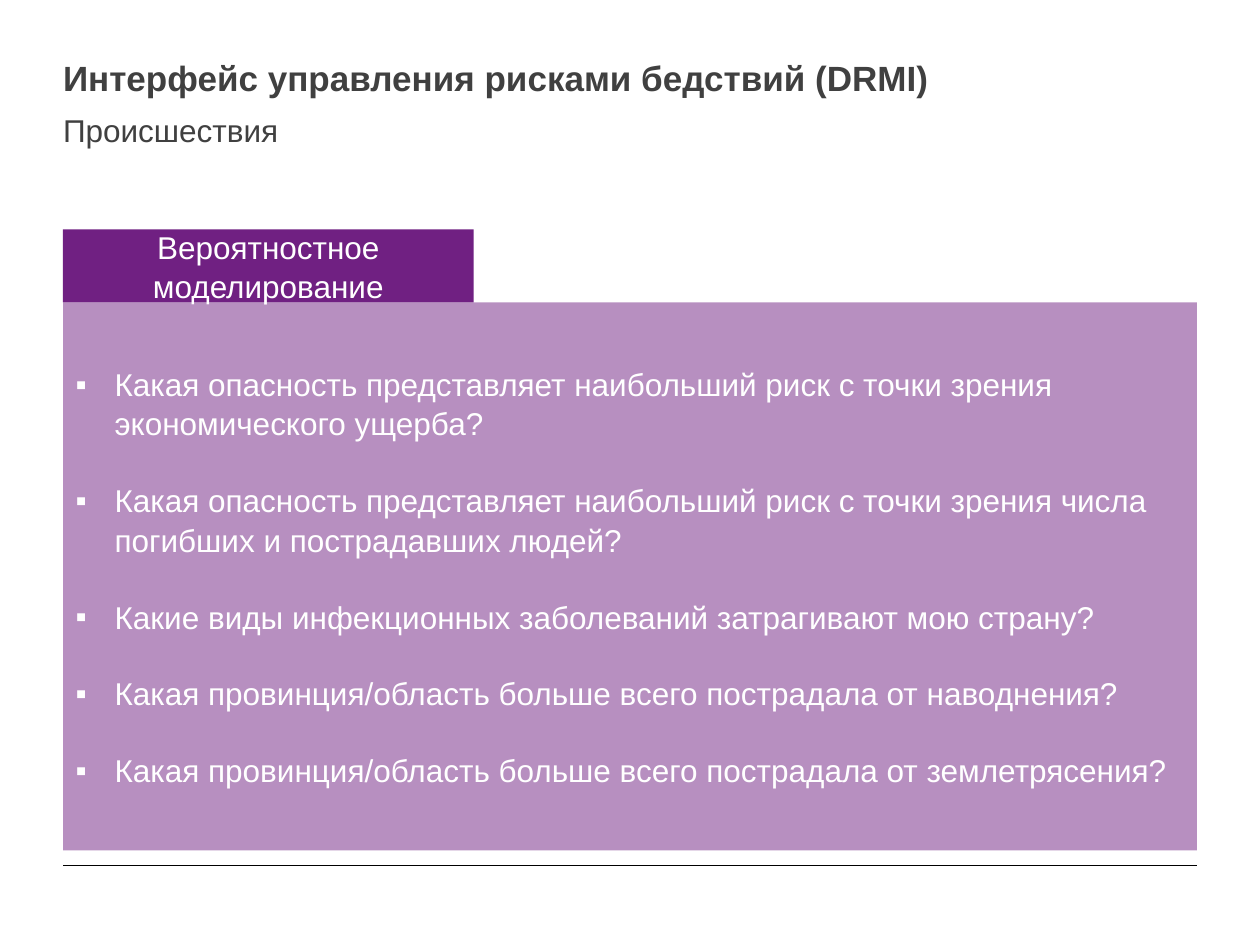
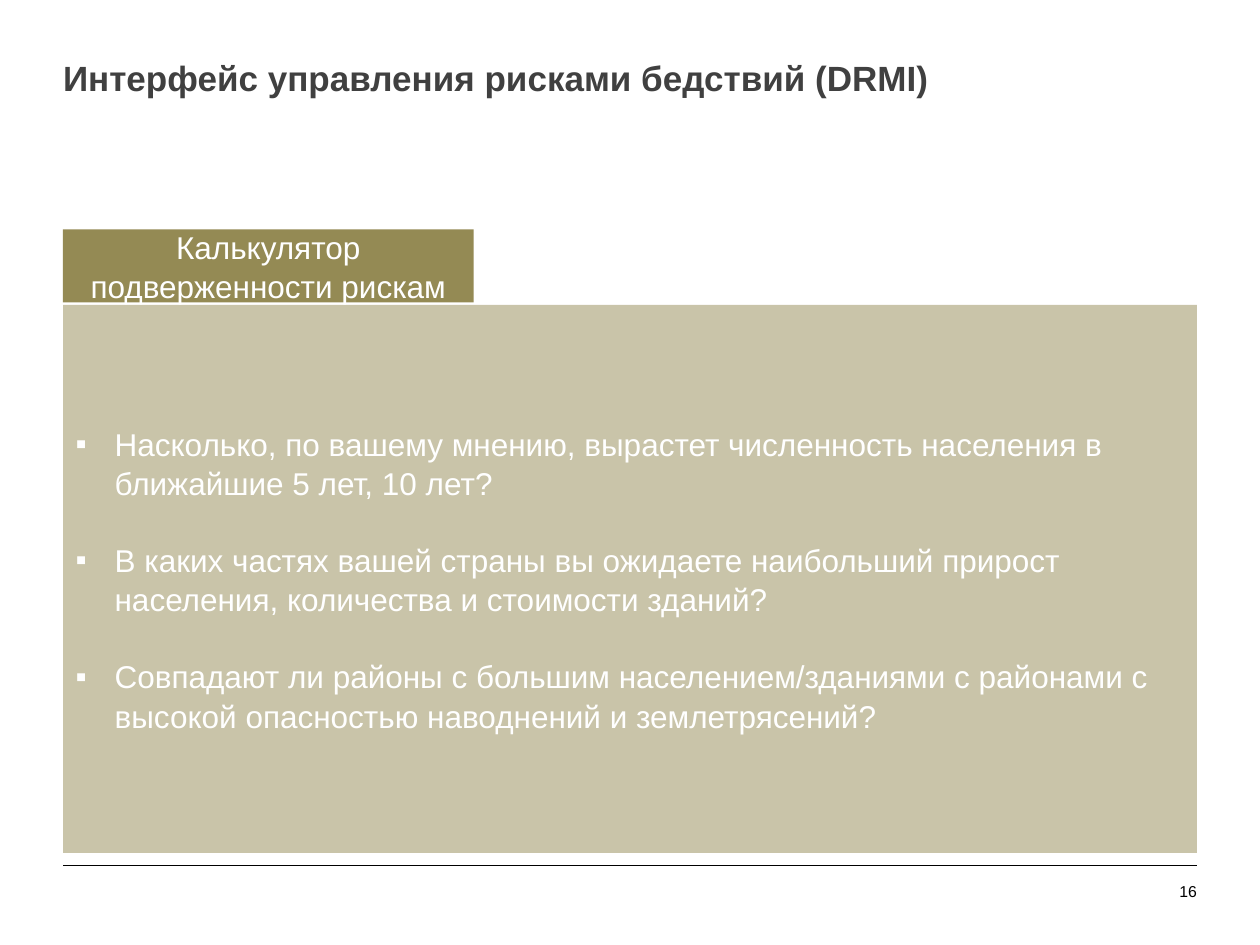
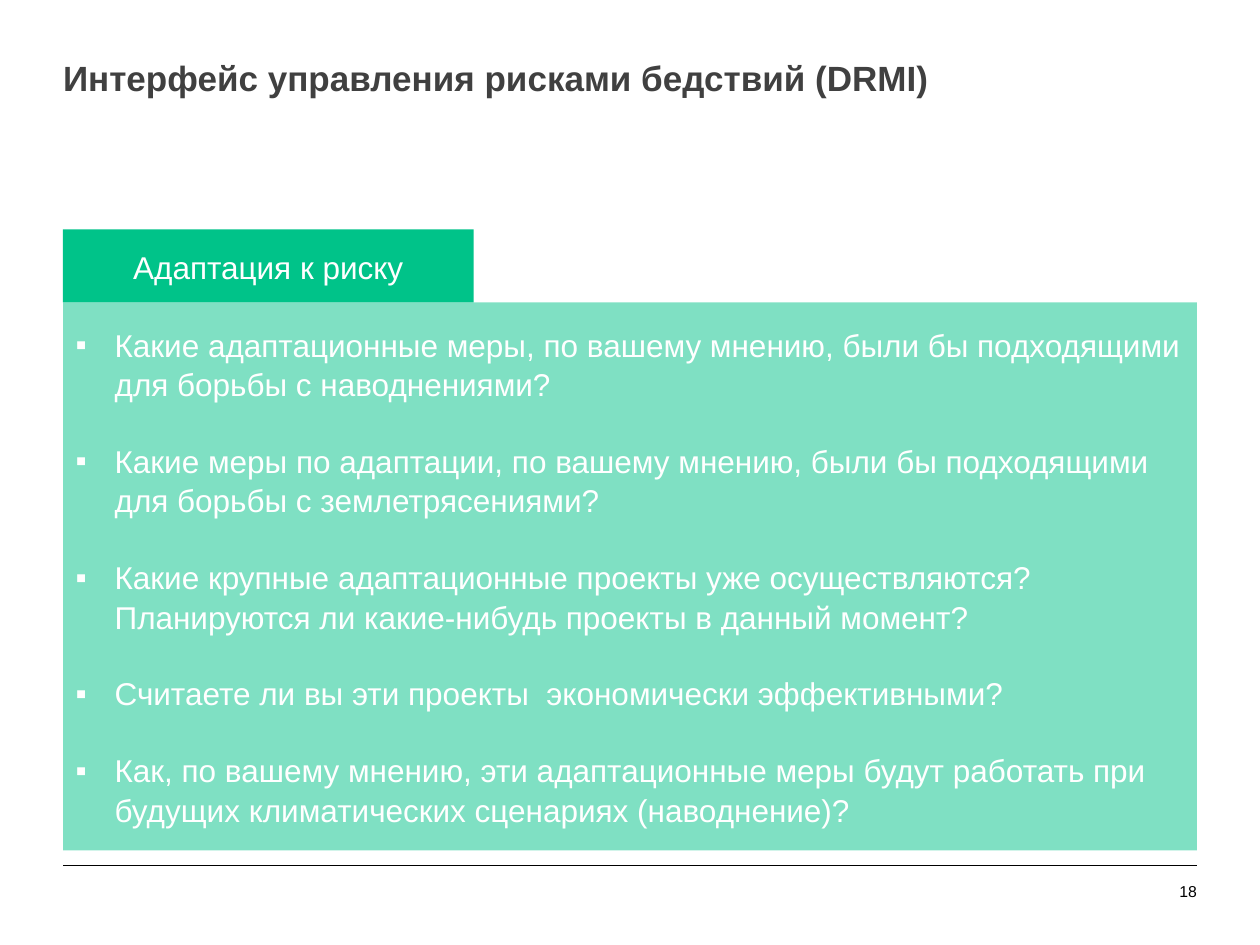
from dataclasses import dataclass

from lxml import etree
from pptx import Presentation
from pptx.dml.color import RGBColor
from pptx.enum.shapes import MSO_CONNECTOR, MSO_SHAPE
from pptx.enum.text import MSO_ANCHOR, MSO_AUTO_SIZE, PP_ALIGN
from pptx.oxml.ns import qn
from pptx.util import Inches, Pt

TOP, MIDDLE, BOTTOM = MSO_ANCHOR.TOP, MSO_ANCHOR.MIDDLE, MSO_ANCHOR.BOTTOM
LEFT, CENTER, RIGHT = PP_ALIGN.LEFT, PP_ALIGN.CENTER, PP_ALIGN.RIGHT
RECTANGLE, STRAIGHT = MSO_SHAPE.RECTANGLE, MSO_CONNECTOR.STRAIGHT
NO_AUTOFIT = MSO_AUTO_SIZE.NONE

TITLE_ONLY_LIST, TITLE_SUBTITLE_LIST = 1, 3
COLUMNS, ROWS = 20, 15
MARGIN, CONTENT_WIDTH = 1, 18
TAB_TOP, TAB_WIDTH, TAB_HEIGHT = 3.64, 6.52, 1.16
PANEL_TOP, PANEL_HEIGHT = TAB_TOP + TAB_HEIGHT, 8.7
RULE_ROW = 13.74


@dataclass(frozen=True)
class Theme:
    font: str = "Arial"
    heading: str = "404040"
    ink: str = "000000"
    light: str = "FFFFFF"
    modelling: str = "702082"
    exposure: str = "948A54"
    adaptation: str = "00C389"
    title_size: float = 20
    text_size: float = 18
    number_size: float = 9
    line_spacing: float = 1.04
    question_gap: float = 21.5
    panel_opacity: int = 50


class Deck:
    def __init__(self, theme):
        self.theme = theme
        self.presentation = Presentation()
        self.presentation.slide_width = Inches(10)
        self.presentation.slide_height = Inches(7.5)
        self.slide = None

    def grid(self, *cells):
        """Turn alternating column and row values into slide lengths."""
        column = self.presentation.slide_width / COLUMNS
        row = self.presentation.slide_height / ROWS
        return [round(cell * (row if i % 2 else column)) for i, cell in enumerate(cells)]

    def place(self, element, *cells):
        element.left, element.top, element.width, element.height = self.grid(*cells)

    def new_slide(self, layout):
        layouts = self.presentation.slide_layouts
        self.slide = self.presentation.slides.add_slide(layouts[layout])

    def set_text(self, element, lines, size, color, align=LEFT, anchor=TOP,
                 bold=False, inset=None, spacing=1.0):
        frame = element.text_frame
        frame.word_wrap = True
        frame.auto_size = NO_AUTOFIT
        frame.vertical_anchor = anchor
        if inset is not None:
            frame.margin_left = frame.margin_right = inset
            frame.margin_top = frame.margin_bottom = inset
        frame.text = "\n".join(lines)
        for paragraph in frame.paragraphs:
            paragraph.alignment = align
            paragraph.line_spacing = spacing
            paragraph.space_before = Pt(0)
            for run in paragraph.runs:
                run.font.name = self.theme.font
                run.font.size = Pt(size)
                run.font.bold = bold
                run.font.color.rgb = RGBColor.from_string(color)
        return frame.paragraphs

    def title(self, text):
        heading = self.slide.shapes.title
        self.place(heading, MARGIN, 0.9, CONTENT_WIDTH, 0.68)
        self.set_text(heading, [text], self.theme.title_size, self.theme.heading,
                      bold=True, inset=0)

    def subtitle(self, text):
        subheading = self.slide.placeholders[1]
        self.place(subheading, MARGIN, 1.76, CONTENT_WIDTH, 0.6)
        paragraph, = self.set_text(subheading, [text], self.theme.text_size,
                                   self.theme.heading, inset=0)
        self.set_bullet(paragraph, None, 0)

    def set_bullet(self, paragraph, mark, indent):
        properties = paragraph._p.get_or_add_pPr()
        properties.set("marL", str(indent))
        properties.set("indent", str(-indent))
        if mark:
            etree.SubElement(properties, qn("a:buChar")).set("char", mark)
        else:
            etree.SubElement(properties, qn("a:buNone"))

    def fill(self, element, color):
        element.fill.solid()
        element.fill.fore_color.rgb = RGBColor.from_string(color)

    def question_panel(self, placeholder_index, questions, color, top):
        panel = self.slide.placeholders[placeholder_index]
        self.place(panel, MARGIN, top, CONTENT_WIDTH, PANEL_HEIGHT)
        self.fill(panel, color)
        tint = panel._element.spPr.find(f".//{qn('a:srgbClr')}")
        etree.SubElement(tint, qn("a:alpha")).set("val", str(self.theme.panel_opacity * 1000))
        paragraphs = self.set_text(panel, questions, self.theme.text_size, self.theme.light,
                                   anchor=MIDDLE, spacing=self.theme.line_spacing)
        for i, paragraph in enumerate(paragraphs):
            self.set_bullet(paragraph, "▪", Inches(0.31))
            if i:
                paragraph.space_before = Pt(self.theme.question_gap)

    def tab(self, text, color):
        label = self.slide.shapes.add_shape(
            RECTANGLE, *self.grid(MARGIN, TAB_TOP, TAB_WIDTH, TAB_HEIGHT))
        label.shadow.inherit = False
        label.line.fill.background()
        self.fill(label, color)
        self.set_text(label, [text], self.theme.text_size, self.theme.light, align=CENTER,
                      anchor=MIDDLE, spacing=self.theme.line_spacing)

    def footer(self, number):
        rule = self.slide.shapes.add_connector(
            STRAIGHT, *self.grid(MARGIN, RULE_ROW, MARGIN + CONTENT_WIDTH, RULE_ROW))
        rule.line.color.rgb = RGBColor.from_string(self.theme.ink)
        rule.line.width = Pt(0.25)
        etree.SubElement(rule._element.spPr, qn("a:effectLst"))
        if number:
            page = self.slide.shapes.add_textbox(*self.grid(18.16, 14, 0.84, 0.3))
            self.set_text(page, [number], self.theme.number_size, self.theme.ink,
                          align=RIGHT, anchor=BOTTOM, inset=0)

    def topic_slide(self, topic, color, questions, subtitle=None, number=None,
                    panel_top=PANEL_TOP):
        self.new_slide(TITLE_SUBTITLE_LIST if subtitle else TITLE_ONLY_LIST)
        self.title("Интерфейс управления рисками бедствий (DRMI)")
        if subtitle:
            self.subtitle(subtitle)
        self.question_panel(2 if subtitle else 1, questions, color, panel_top)
        self.tab(topic, color)
        self.footer(number)


def main():
    theme = Theme()
    deck = Deck(theme)
    deck.topic_slide(
        "Вероятностное моделирование", theme.modelling,
        ["Какая опасность представляет наибольший риск с точки зрения экономического ущерба?",
         "Какая опасность представляет наибольший риск с точки зрения числа погибших и "
         "пострадавших людей?",
         "Какие виды инфекционных заболеваний затрагивают мою страну?",
         "Какая провинция/область больше всего пострадала от наводнения?",
         "Какая провинция/область больше всего пострадала от землетрясения?"],
        subtitle="Происшествия")
    deck.topic_slide(
        "Калькулятор подверженности рискам", theme.exposure,
        ["Насколько, по вашему мнению, вырастет численность населения в ближайшие "
         "5 лет, 10 лет?",
         "В каких частях вашей страны вы ожидаете наибольший прирост населения, "
         "количества и стоимости зданий?",
         "Совпадают ли районы с большим населением/зданиями с районами с высокой "
         "опасностью наводнений и землетрясений?"],
        number="16", panel_top=PANEL_TOP + 0.04)
    deck.topic_slide(
        "Адаптация к риску", theme.adaptation,
        ["Какие адаптационные меры, по вашему мнению, были бы подходящими для борьбы "
         "с наводнениями?",
         "Какие меры по адаптации, по вашему мнению, были бы подходящими для борьбы "
         "с землетрясениями?",
         "Какие крупные адаптационные проекты уже осуществляются? Планируются ли "
         "какие-нибудь проекты в данный момент?",
         "Считаете ли вы эти проекты  экономически эффективными?",
         "Как, по вашему мнению, эти адаптационные меры будут работать при будущих "
         "климатических сценариях (наводнение)?"],
        number="18")
    deck.presentation.save("out.pptx")


if __name__ == "__main__":
    main()
